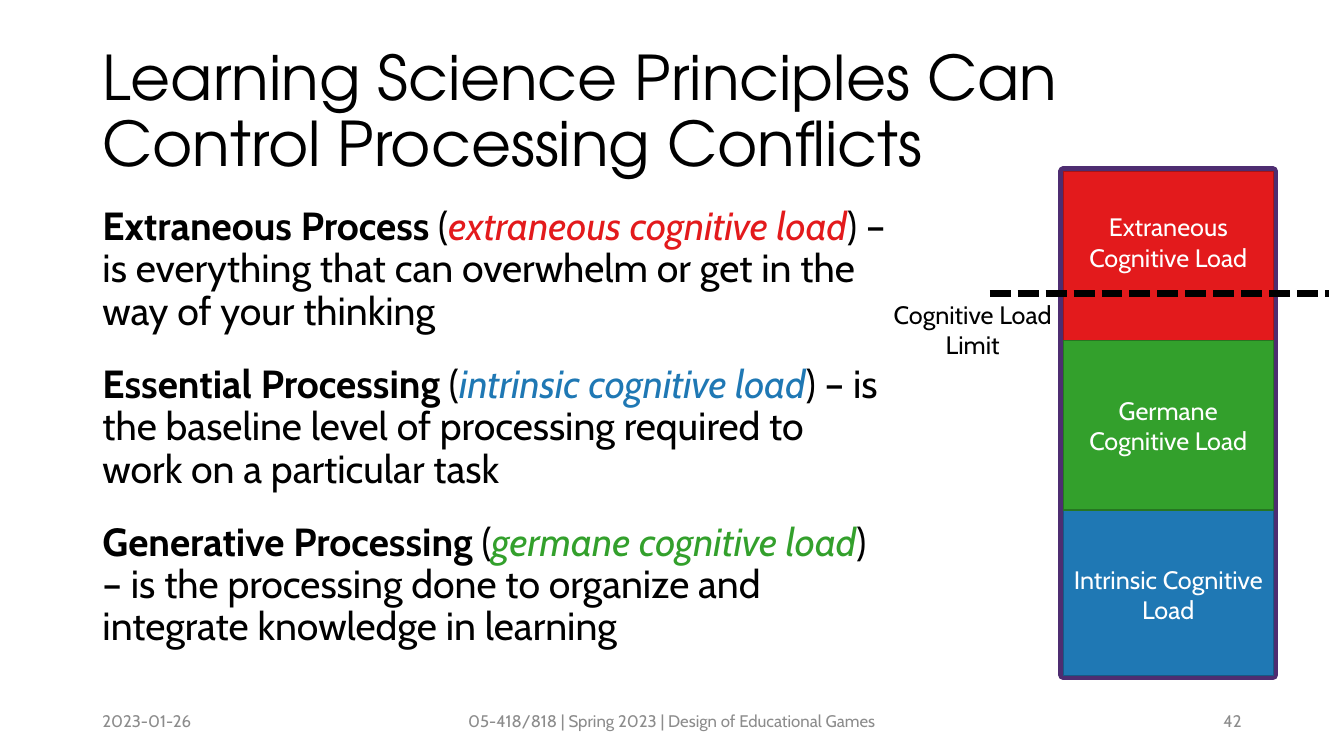
from dataclasses import dataclass

from lxml import etree
from pptx import Presentation
from pptx.dml.color import RGBColor
from pptx.enum.dml import MSO_LINE
from pptx.enum.shapes import MSO_CONNECTOR, MSO_SHAPE
from pptx.enum.text import MSO_ANCHOR, MSO_AUTO_SIZE, PP_ALIGN
from pptx.oxml.ns import qn
from pptx.util import Pt

LEFT, MID, RIGHT = PP_ALIGN.LEFT, PP_ALIGN.CENTER, PP_ALIGN.RIGHT
TOP, CENTER, BOTTOM = MSO_ANCHOR.TOP, MSO_ANCHOR.MIDDLE, MSO_ANCHOR.BOTTOM


@dataclass(frozen=True)
class Theme:
    head: str = "TeX Gyre Adventor"
    text: str = "Cabin"
    black: str = "000000"
    white: str = "FFFFFF"
    gray: str = "8C8C8C"
    red: str = "E31A1C"
    red_edge: str = "A81315"
    green: str = "33A02C"
    green_edge: str = "267621"
    blue: str = "1F78B4"
    blue_edge: str = "175985"
    purple: str = "6A3D99"
    purple_edge: str = "4E2D71"
    title_size: int = 44
    body_size: int = 28
    label_size: int = 18
    foot_size: int = 12


T = Theme()

TERMS = [
    ("Extraneous Process", "extraneous cognitive load", T.red,
     "is everything that can overwhelm or get in the way of your thinking"),
    ("Essential Processing", "intrinsic cognitive load", T.blue,
     "is the baseline level of processing required to work on a particular task"),
    ("Generative Processing", "germane cognitive load", T.green,
     "is the processing done to organize and integrate knowledge in learning"),
]


def style(font, size, color, name=T.text):
    font.name, font.size = name, Pt(size)
    font.color.rgb = RGBColor.from_string(color)


def place(shape, box):
    shape.left, shape.top, shape.width, shape.height = map(Pt, box)


def write(shape, text, size, color, align=MID, anchor=CENTER):
    frame = shape.text_frame
    frame.word_wrap = True
    frame.vertical_anchor = anchor
    frame.text = text
    para = frame.paragraphs[0]
    para.alignment = align
    style(para.runs[0].font, size, color)


def add_title(slide, box):
    title = slide.shapes.title
    place(title, box)
    write(title, "Learning Science Principles Can Control Processing Conflicts",
          T.title_size, T.black, LEFT)
    title.text_frame.auto_size = MSO_AUTO_SIZE.NONE
    para = title.text_frame.paragraphs[0]
    para.line_spacing = 0.9
    para.runs[0].font.name = T.head


def add_terms(slide, box):
    body = slide.placeholders[1]
    place(body, box)
    frame = body.text_frame
    frame.auto_size = MSO_AUTO_SIZE.NONE
    for i, (name, load, color, gist) in enumerate(TERMS):
        para = frame.add_paragraph() if i else frame.paragraphs[0]
        props = para._p.get_or_add_pPr()
        props.set("marL", "0")
        props.set("indent", "0")
        etree.SubElement(props, qn("a:buNone"))
        para.line_spacing = 0.9
        para.space_before = Pt(22 if i else 0)
        parts = [(name, T.black, True, False), (" (", T.black, False, False),
                 (load, color, False, True), (f") – {gist}", T.black, False, False)]
        for text, tint, bold, slant in parts:
            run = para.add_run()
            run.text = text
            style(run.font, T.body_size, tint)
            run.font.bold, run.font.italic = bold, slant


def add_block(slide, box, fill, edge, width):
    block = slide.shapes.add_shape(MSO_SHAPE.RECTANGLE, *map(Pt, box))
    block.shadow.inherit = False
    block.fill.solid()
    block.fill.fore_color.rgb = RGBColor.from_string(fill)
    block.line.color.rgb = RGBColor.from_string(edge)
    block.line.width = Pt(width)
    return block


def add_limit(slide, x, y, width):
    """Draw the dashed limit and its label, starting at x, y."""
    line = slide.shapes.add_connector(
        MSO_CONNECTOR.STRAIGHT, Pt(x), Pt(y), Pt(x + width), Pt(y))
    line.line.color.rgb = RGBColor.from_string(T.black)
    line.line.width = Pt(5)
    line.line.dash_style = MSO_LINE.SQUARE_DOT
    etree.SubElement(line._element.spPr, qn("a:effectLst"))
    label = slide.shapes.add_textbox(Pt(x - 83.5), Pt(y + 0.5), Pt(142.5), Pt(51))
    write(label, "Cognitive Load Limit", T.label_size, T.black, anchor=TOP)


def add_stack(slide, box):
    """Draw the load bar; the germane block overlaps its two neighbours."""
    x, y, w, h = box
    add_block(slide, box, T.purple, T.purple_edge, 7)

    blue = add_block(slide, (x, y + h - 203, w, 203), T.blue, T.blue_edge, 1)
    write(blue, "Intrinsic Cognitive Load", T.label_size, T.white, anchor=BOTTOM)
    blue.text_frame.margin_bottom = Pt(36)

    red = add_block(slide, (x, y, w, 209), T.red, T.red_edge, 1)
    write(red, "Extraneous Cognitive Load", T.label_size, T.white, anchor=TOP)
    red.text_frame.margin_top = Pt(28.8)

    add_limit(slide, x - 52.5, y + 87, 242)

    green = add_block(slide, (x, y + 121, w, 121), T.green, T.green_edge, 1)
    write(green, "Germane Cognitive Load", T.label_size, T.white)


def add_footer(slide, box):
    x, y, w, h = box
    course = "05-418/818 | Spring 2023 | Design of Educational Games"
    cells = [("2023-01-26", 216, 0, LEFT), (course, 324, 0.5, MID),
             ("42", 216, 1, RIGHT)]
    for text, wide, share, align in cells:
        cell = slide.shapes.add_textbox(
            Pt(x + (w - wide) * share), Pt(y), Pt(wide), Pt(h))
        write(cell, text, T.foot_size, T.gray, align)


def main():
    deck = Presentation()
    deck.slide_width, deck.slide_height = Pt(960), Pt(540)
    slide = deck.slides.add_slide(deck.slide_layouts[1])
    add_title(slide, (66, 28.75, 828, 104.4))
    add_terms(slide, (66, 144, 576, 342.6))
    add_footer(slide, (66, 500.5, 828, 28.75))
    add_stack(slide, (759.5, 122.4, 150, 360))
    deck.save("out.pptx")


if __name__ == "__main__":
    main()
